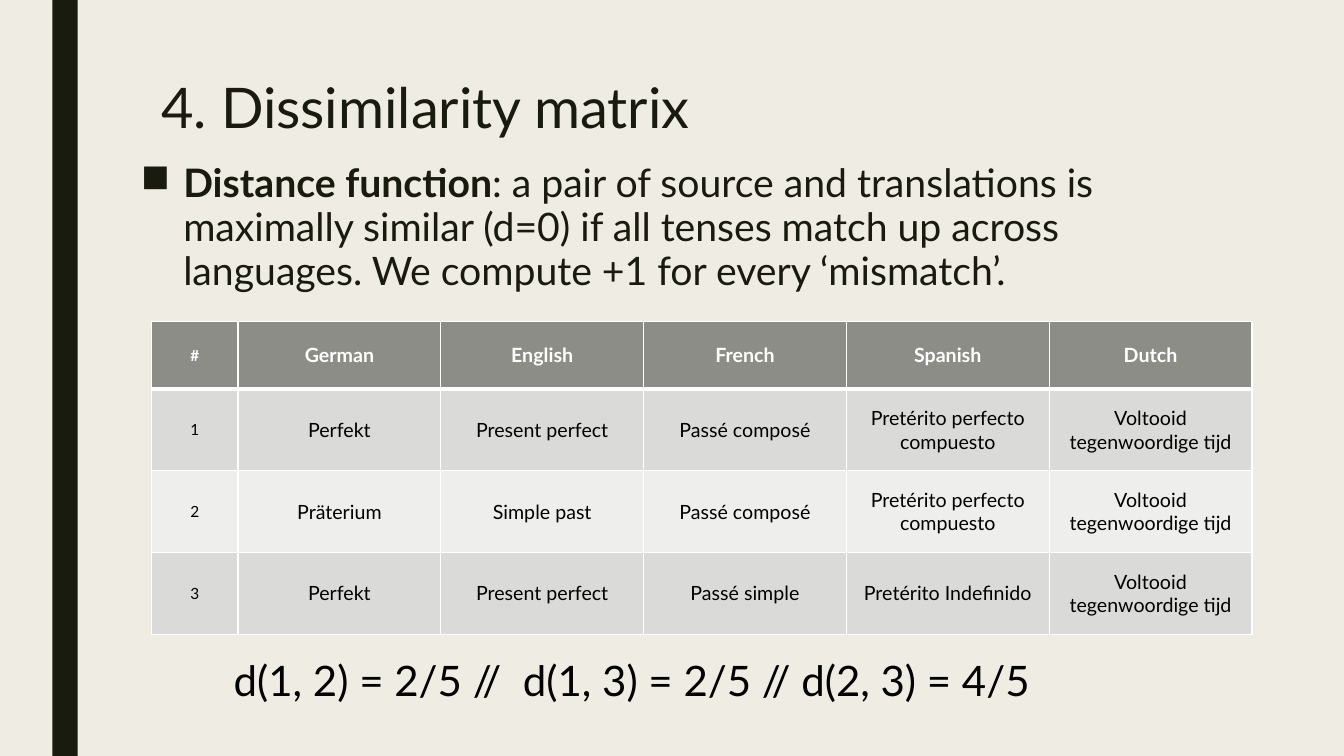
import pptx
import pptx.dml.color
import pptx.enum.shapes
import pptx.enum.text
import pptx.oxml
import pptx.oxml.ns
import pptx.util

Cm, Pt = pptx.util.Cm, pptx.util.Pt
RGBColor = pptx.dml.color.RGBColor
PP_ALIGN = pptx.enum.text.PP_ALIGN
MSO_ANCHOR = pptx.enum.text.MSO_ANCHOR

PAPER = RGBColor(0xEF, 0xED, 0xE3)
INK = RGBColor(0x19, 0x1B, 0x0E)
BLACK = RGBColor(0, 0, 0)
WHITE = RGBColor(0xFF, 0xFF, 0xFF)
HEADER = RGBColor(0x8C, 0x8D, 0x86)
BANDS = (RGBColor(0xDA, 0xDB, 0xD9), RGBColor(0xEE, 0xEE, 0xED))

TENSES = [
    ("#", "German", "English", "French", "Spanish", "Dutch"),
    ("1", "Perfekt", "Present perfect", "Passé composé",
     "Pretérito perfecto compuesto", "Voltooid tegenwoordige tijd"),
    ("2", "Präterium", "Simple past", "Passé composé",
     "Pretérito perfecto compuesto", "Voltooid tegenwoordige tijd"),
    ("3", "Perfekt", "Present perfect", "Passé simple",
     "Pretérito Indefinido", "Voltooid tegenwoordige tijd"),
]


def add_run(p, text, size, color, bold=False):
    r = p.add_run()
    r.text = text
    for name, value in {"name": "Lato", "size": Pt(size), "bold": bold}.items():
        setattr(r.font, name, value)
    r.font.color.rgb = color


def add_paragraph_box(s, box, **formats):
    tf = s.shapes.add_textbox(*box).text_frame
    tf.word_wrap = True
    p = tf.paragraphs[0]
    for name, value in formats.items():
        setattr(p, name, value)
    return p


def add_xml(parent, xml):
    ns = pptx.oxml.ns.nsdecls("a")
    parent.append(pptx.oxml.parse_xml(xml.replace(" ", f" {ns} ", 1)))


# Background and side bar
def draw_backdrop(s, left, width, height):
    s.background.fill.solid()
    s.background.fill.fore_color.rgb = PAPER
    sp = s.shapes.add_shape(pptx.enum.shapes.MSO_SHAPE.RECTANGLE,
                            left, 0, width, height)
    sp.shadow.inherit = False
    sp.fill.solid()
    sp.fill.fore_color.rgb = INK
    sp.line.fill.background()


# Title
def draw_title(s, *box):
    p = add_paragraph_box(s, box, line_spacing=0.89)
    add_run(p, "4. Dissimilarity matrix", 40, INK)


# Bulleted definition
def draw_definition(s, *box):
    p = add_paragraph_box(s, box, line_spacing=0.94,
                          space_before=Pt(10), space_after=Pt(2))
    add_run(p, "Distance function", 28, INK, True)
    add_run(p, ": a pair of source and translations is maximally similar (d=0) "
               "if all tenses match up across languages. We compute +1 for "
               "every ‘mismatch’.", 28, INK)
    pPr = p._p.get_or_add_pPr()
    indent = Cm(1.07)
    pPr.set("marL", str(indent))
    pPr.set("indent", str(-indent))
    add_xml(pPr, '<a:buChar char="■"/>')


def set_borders(cell, bottom):
    tcPr = cell._tc.get_or_add_tcPr()
    for side, width in {"L": 1, "R": 1, "T": 1, "B": bottom}.items():
        add_xml(tcPr, f'<a:ln{side} w="{Pt(width)}"><a:solidFill>'
                      f'<a:srgbClr val="{WHITE}"/></a:solidFill></a:ln{side}>')


# Table of tenses per language
def draw_tenses(s, left, top, width, height):
    n_rows, n_cols = len(TENSES), len(TENSES[0])
    table = s.shapes.add_table(n_rows, n_cols, left, top, width, height).table
    number_width, header_height = Cm(2.18), Cm(1.7)
    for j, col in enumerate(table.columns):
        col.width = number_width if j == 0 else (width - number_width) // (n_cols - 1)
    for i, row in enumerate(table.rows):
        row.height = header_height if i == 0 else (height - header_height) // (n_rows - 1)
        is_header = i == 0
        for j, text in enumerate(TENSES[i]):
            cell = table.cell(i, j)
            set_borders(cell, 3 if is_header else 1)
            cell.fill.solid()
            cell.fill.fore_color.rgb = HEADER if is_header else BANDS[(i - 1) % 2]
            cell.vertical_anchor = MSO_ANCHOR.MIDDLE
            p = cell.text_frame.paragraphs[0]
            p.alignment = PP_ALIGN.CENTER
            add_run(p, text, 11 if j == 0 else 14,
                    WHITE if is_header else BLACK, is_header)


# Resulting distances
def draw_distances(s, *box):
    p = add_paragraph_box(s, box)
    add_run(p, "d(1, 2) = 2/5 //  d(1, 3) = 2/5 // d(2, 3) = 4/5", 30, BLACK)


def main():
    prs = pptx.Presentation()
    prs.slide_width, prs.slide_height = Cm(33.87), Cm(19.05)
    s = prs.slides.add_slide(prs.slide_layouts[6])
    draw_backdrop(s, Cm(1.32), Cm(0.64), prs.slide_height)
    draw_title(s, Cm(3.81), Cm(1.9), Cm(26.67), Cm(4.11))
    draw_definition(s, Cm(3.3), Cm(3.96), Cm(27.71), Cm(13.03))
    draw_tenses(s, Cm(3.82), Cm(8.1), Cm(27.73), Cm(7.88))
    draw_distances(s, Cm(5.64), Cm(16.38), Cm(23.06), Cm(1.55))
    prs.save("out.pptx")


if __name__ == "__main__":
    main()
